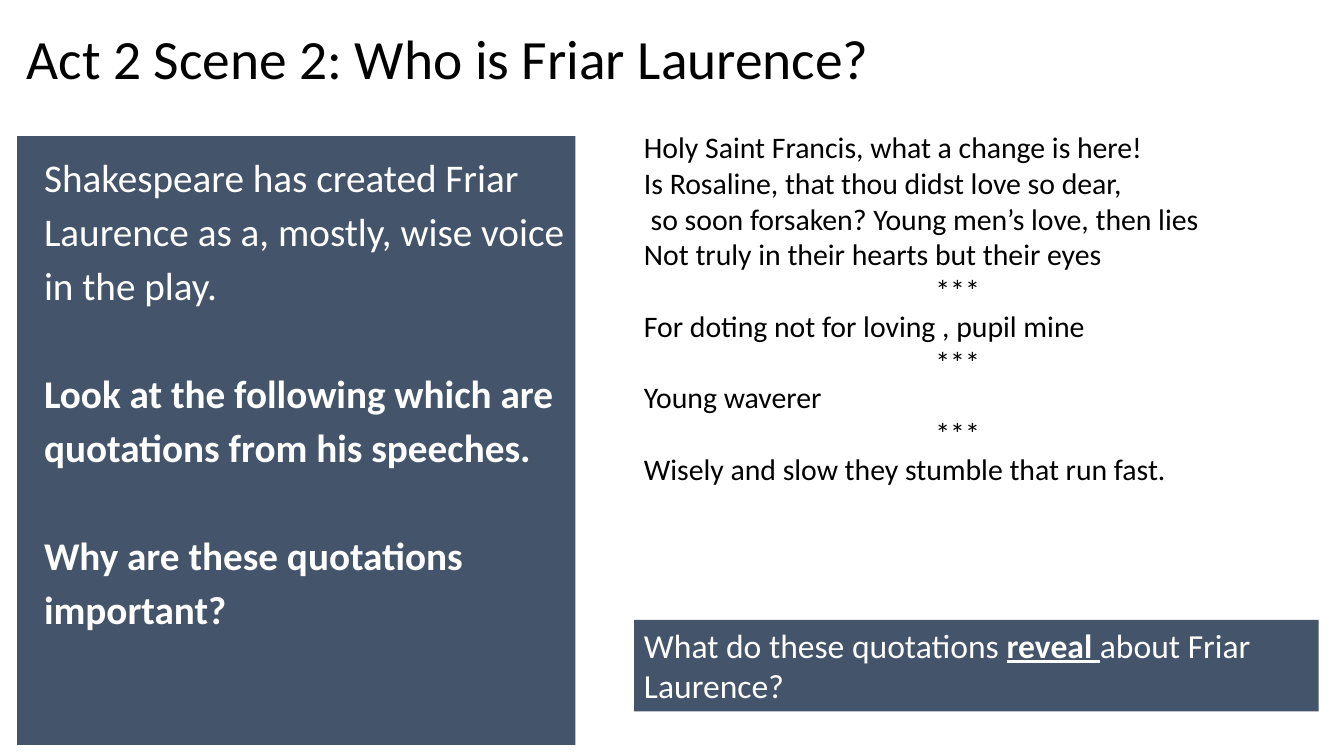
from pptx import Presentation
from pptx.dml.color import RGBColor
from pptx.enum.shapes import MSO_SHAPE as Shape
from pptx.enum.text import MSO_ANCHOR as Anchor, PP_ALIGN as Align
from pptx.util import Cm, Pt

FONT = "Calibri"
SLATE, WHITE, BLACK = "44546A", "FFFFFF", "000000"
DIVIDER = "***"
TASKS = [
    "Shakespeare has created Friar Laurence as a, mostly, wise voice in the play.",
    "Look at the following which are quotations from his speeches.",
    "Why are these quotations important?",
]
QUOTES = [
    "Holy Saint Francis, what a change is here!",
    "Is Rosaline, that thou didst love so dear,",
    " so soon forsaken? Young men’s love, then lies",
    "Not truly in their hearts but their eyes",
    DIVIDER,
    "For doting not for loving , pupil mine",
    DIVIDER,
    "Young waverer",
    DIVIDER,
    "Wisely and slow they stumble that run fast.",
]


def color(value):
    return RGBColor.from_string(value)


def add_text_area(page, box, fill=None, anchor=Anchor.TOP):
    """Add a text box, or a rectangle if a fill is given; return its text frame."""
    lengths = [Cm(length) for length in box]
    if fill:
        area = page.shapes.add_shape(Shape.RECTANGLE, *lengths)
        area.shadow.inherit = False
        area.fill.solid()
        area.fill.fore_color.rgb = color(fill)
        area.line.fill.background()
    else:
        area = page.shapes.add_textbox(*lengths)
    frame = area.text_frame
    frame.word_wrap = True
    frame.vertical_anchor = anchor
    return frame


def add_paras(frame, lines, size, ink):
    """Write one paragraph per line and return the paragraphs."""
    for number, line in enumerate(lines):
        para = frame.add_paragraph() if number else frame.paragraphs[0]
        para.text = line
        para.alignment = Align.LEFT
        para.font.name = FONT
        para.font.size = Pt(size)
        para.font.color.rgb = color(ink)
    return frame.paragraphs


def add_title(page, box):
    frame = add_text_area(page, box, anchor=Anchor.MIDDLE)
    add_paras(frame, ["Act 2 Scene 2: Who is Friar Laurence?"], 39.6, BLACK)


def add_task_panel(page, box):
    frame = add_text_area(page, box, SLATE)
    frame.margin_left, frame.margin_right = Cm(0.68), Cm(0.2)
    frame.margin_top = Cm(0.25)
    for number, para in enumerate(add_paras(frame, TASKS, 28, WHITE)):
        para.line_spacing = 1.15
        if number:
            para.font.bold = True
            para.space_before = Pt(38.6)


def add_quotes(page, box):
    frame = add_text_area(page, box)
    for para in add_paras(frame, QUOTES, 21.3, BLACK):
        if para.text == DIVIDER:
            para.alignment = Align.CENTER


def add_question(page, box):
    frame = add_text_area(page, box, SLATE)
    para = add_paras(frame, ["What do these quotations "], 24, WHITE)[0]
    key_word = para.add_run()
    key_word.text = "reveal "
    key_word.font.bold = key_word.font.underline = True
    para.add_run().text = "about Friar Laurence?"


def main():
    deck = Presentation()
    deck.slide_width, deck.slide_height = Cm(33.87), Cm(19.05)
    page = deck.slides.add_slide(deck.slide_layouts[6])
    left, right = 0.43, 15.98
    add_title(page, (left, 0.28, 32.79, 2.34))
    add_task_panel(page, (left, 3.43, 14.07, 15.34))
    add_quotes(page, (right, 3.12, 16.31, 9.37))
    add_question(page, (right, 15.62, 17.25, 2.31))
    deck.save("out.pptx")


if __name__ == "__main__":
    main()
